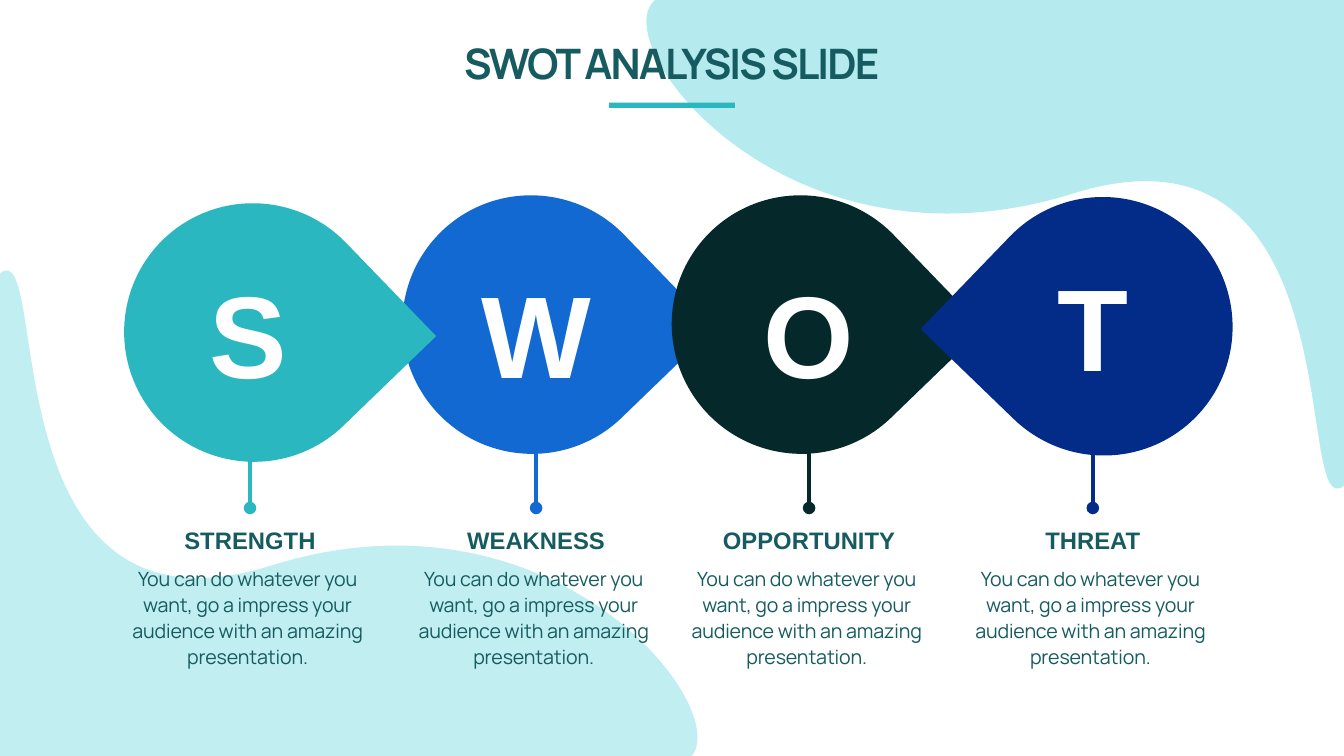
"""Build a SWOT analysis slide with four linked teardrops over soft waves."""
from lxml import etree
from pptx import Presentation
from pptx.dml.color import RGBColor
from pptx.enum.shapes import MSO_CONNECTOR as Connector, MSO_SHAPE as Shape
from pptx.enum.text import MSO_ANCHOR as Anchor, PP_ALIGN as Align
from pptx.oxml.ns import qn
from pptx.util import Cm, Pt

TEAL = RGBColor(0x2A, 0xB7, 0xBF)
BLUE = RGBColor(0x11, 0x69, 0xD1)
DARK = RGBColor(0x05, 0x29, 0x2A)
NAVY = RGBColor(0x02, 0x2C, 0x88)
WAVE = RGBColor(0x77, 0xDB, 0xE1)
INK = RGBColor(0x15, 0x5B, 0x60)
WHITE = RGBColor(0xFF, 0xFF, 0xFF)

WIDTH, HEIGHT = 33.87, 19.05
WAVE_BOTTOM = 19.13
WAVE_BOUNDS = [(16.28, 0), (33.87, 0), (33.87, 12.32)]
WAVE_STEPS = [
    ("moveTo", [(33.87, 0)]),
    ("lnTo", [(33.87, 12.24)]),
    ("cubicBezTo", [(32.56, 13.31), (34.26, 2.62), (27.03, 4.88)]),
    ("cubicBezTo", [(19.81, 7.14), (15.21, 1.09), (16.51, 0)]),
    ("close", []),
]
DROP_W, DROP_H = 6.53, 6.5
TIP_RIGHT, TIP_LEFT = 46, 224

DESCRIPTION = ("You can do whatever you want, go a impress your audience "
               "with an amazing presentation.")
# letter, heading, colour, drop left, drop top, tip angle,
# letter centre, letter top, column centre
TOPICS = [
    ("W", "WEAKNESS", BLUE, 10.13, 4.93, TIP_RIGHT, 13.52, 6.46, 13.51),
    ("S", "STRENGTH", TEAL, 3.12, 5.13, TIP_RIGHT, 6.26, 6.46, 6.3),
    ("O", "OPPORTUNITY", DARK, 16.92, 4.93, TIP_RIGHT, 20.39, 6.46, 20.39),
    ("T", "THREAT", NAVY, 24.54, 4.97, TIP_LEFT, 27.54, 6.29, 27.54),
]


def paint(shape, color):
    """Give a shape a flat fill without outline or shadow."""
    shape.shadow.inherit = False
    shape.fill.solid()
    shape.fill.fore_color.rgb = color
    shape.line.fill.background()


def top_corner(x, y):
    """Keep a wave point in the top right corner."""
    return Cm(x), Cm(y)


def bottom_corner(x, y):
    """Turn a wave point half round into the bottom left corner."""
    return Cm(WIDTH - x), Cm(WAVE_BOTTOM - y)


def add_wave(slide, place, opacity):
    """Draw a translucent curved wave behind everything on the layout."""
    bounds = [place(x, y) for x, y in WAVE_BOUNDS]
    builder = slide.shapes.build_freeform(*bounds[0])
    builder.add_line_segments(bounds[1:], close=True)
    wave = builder.convert_to_shape()
    paint(wave, WAVE)
    color = wave._element.spPr.find(f"{qn('a:solidFill')}/{qn('a:srgbClr')}")
    etree.SubElement(color, qn("a:alpha")).set("val", str(opacity * 1000))

    outline = next(wave._element.iter(qn("a:path")))
    for segment in list(outline):
        outline.remove(segment)
    for kind, points in WAVE_STEPS:
        segment = etree.SubElement(outline, qn(f"a:{kind}"))
        for point in points:
            x, y = place(*point)
            node = etree.SubElement(segment, qn("a:pt"))
            node.set("x", str(x - wave.left))
            node.set("y", str(y - wave.top))
    slide.slide_layout.shapes._spTree.append(wave._element)


def write(box, text, *, size, font="Arial", color=INK, bold=False, wrap=False,
          anchor=Anchor.MIDDLE, tracking=0, leading=None, margins=None):
    """Fill a box with one centred, formatted paragraph."""
    frame = box.text_frame
    frame.word_wrap = wrap
    frame.vertical_anchor = anchor
    if margins:
        frame.margin_left = frame.margin_right = Cm(margins[0])
        frame.margin_top = frame.margin_bottom = Cm(margins[1])
    paragraph = frame.paragraphs[0]
    paragraph.alignment = Align.CENTER
    if leading:
        paragraph.line_spacing = Pt(leading)
    run = paragraph.add_run()
    run.text = text
    run.font.name = font
    run.font.size = Pt(size)
    run.font.bold = bold
    run.font.color.rgb = color
    if tracking:
        run._r.get_or_add_rPr().set("spc", str(round(tracking * 100)))


def add_label(slide, text, center, top, width, height, **style):
    """Add a text box centred on a column."""
    box = slide.shapes.add_textbox(
        Cm(center - width / 2), Cm(top), Cm(width), Cm(height))
    write(box, text, **style)


def add_title(slide):
    """Place the title and its underline."""
    title = slide.shapes.title
    title.left, title.top = Cm(11.28), Cm(0.81)
    title.width, title.height = Cm(11.3), Cm(1.55)
    write(title, "SWOT ANALYSIS SLIDE", size=30, font="Manrope", bold=True,
          anchor=Anchor.TOP, tracking=-1.4)
    underline = slide.shapes.add_shape(
        Shape.RECTANGLE, Cm(15.35), Cm(2.59), Cm(3.17), Cm(0.13))
    paint(underline, TEAL)


def add_drop(slide, color, left, top, angle):
    """Add a teardrop turned so that its tip points sideways."""
    drop = slide.shapes.add_shape(
        Shape.TEAR, Cm(left), Cm(top), Cm(DROP_W), Cm(DROP_H))
    drop.rotation = angle
    paint(drop, color)


def add_stem(slide, color, center):
    """Add the dotted-end line that leads from a teardrop to its heading."""
    stem = slide.shapes.add_connector(
        Connector.STRAIGHT, Cm(center), Cm(10.87), Cm(center), Cm(12.8))
    stem.line.color.rgb = color
    stem.line.width = Pt(3)
    etree.SubElement(stem.line._get_or_add_ln(), qn("a:tailEnd")).set("type", "oval")
    etree.SubElement(stem._element.spPr, qn("a:effectLst"))


def main():
    """Assemble and save the slide."""
    deck = Presentation()
    deck.slide_width, deck.slide_height = Cm(WIDTH), Cm(HEIGHT)
    slide = deck.slides.add_slide(deck.slide_layouts[5])

    add_wave(slide, top_corner, 54)
    add_wave(slide, bottom_corner, 45)
    add_title(slide)

    for _, _, color, left, top, angle, *_ in TOPICS:
        add_drop(slide, color, left, top, angle)
    for letter, heading, color, *_, letter_center, letter_top, center in TOPICS:
        add_label(slide, letter, letter_center, letter_top, 3.3, 3.81,
                  size=83, color=WHITE, bold=True)
        add_stem(slide, color, center)
        add_label(slide, heading, center, 13.11, 4.9, 0.99, size=17, bold=True)
        add_label(slide, DESCRIPTION, center - 0.06, 14.07, 6.5, 3,
                  size=14, font="Manrope", wrap=True, anchor=Anchor.TOP,
                  tracking=-0.1, leading=18.5, margins=(0.25, 0.15))

    deck.save("out.pptx")


if __name__ == "__main__":
    main()
